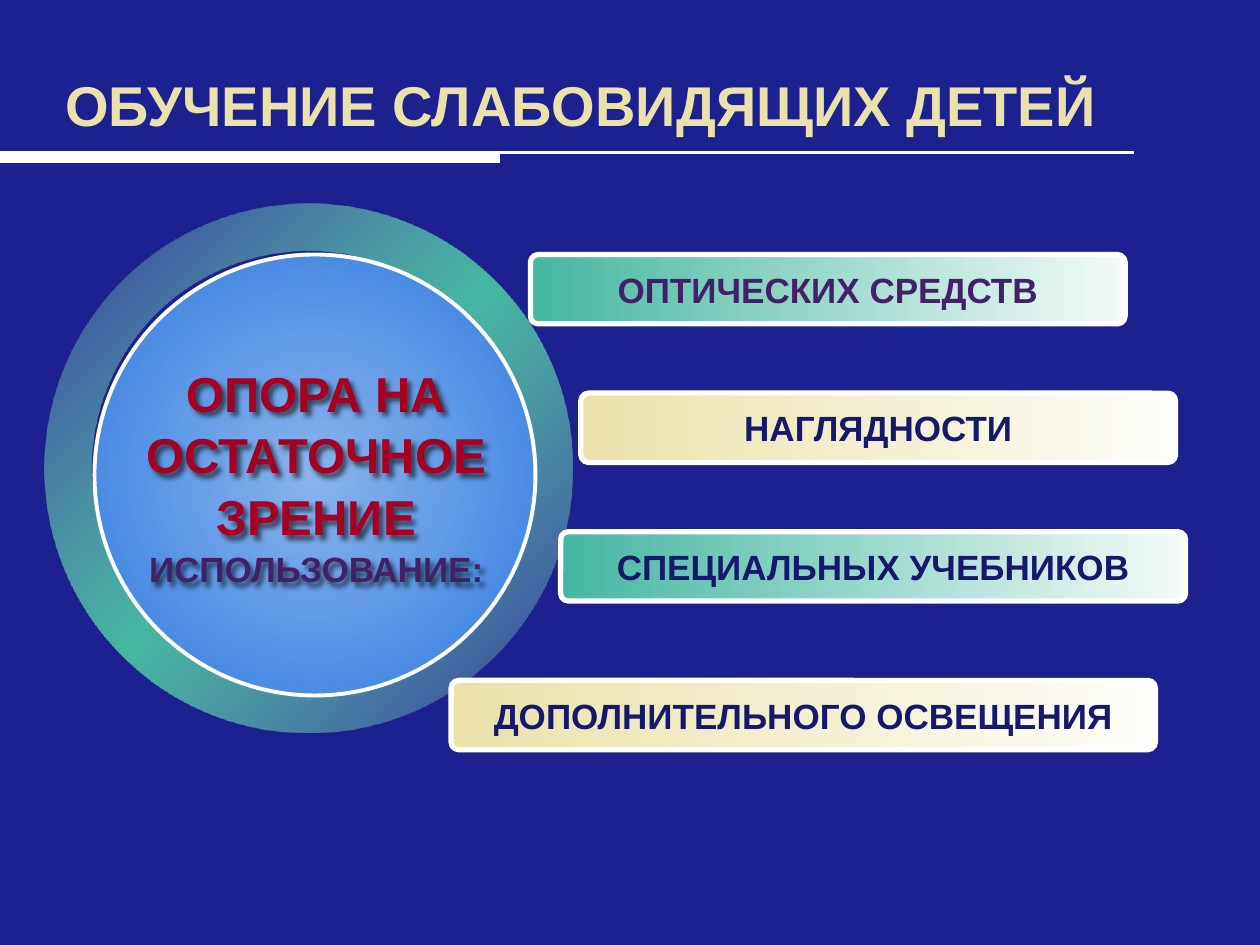
"""Builds a slide on teaching visually impaired children."""
import dataclasses

import lxml.etree
import pptx
import pptx.dml.color
import pptx.enum.shapes
import pptx.enum.text
import pptx.oxml.ns
import pptx.util

Inches = pptx.util.Inches
Pt = pptx.util.Pt
qn = pptx.oxml.ns.qn
Shape = pptx.enum.shapes.MSO_SHAPE
Align = pptx.enum.text.PP_ALIGN
Anchor = pptx.enum.text.MSO_ANCHOR


@dataclasses.dataclass(frozen=True)
class Theme:
    font: str = "Arial"
    background: str = "1D208F"
    white: str = "FFFFFF"
    shadow: str = "000000"
    sand: str = "EAE2AA"
    sand_pale: str = "FEFDFA"
    teal: str = "45B7A1"
    teal_light: str = "8ED3C6"
    teal_pale: str = "F4FBF9"
    blue_light: str = "8AB4ED"
    blue: str = "2F7ADF"
    navy: str = "16186C"
    purple: str = "432169"
    red: str = "A50021"
    title_size: int = 32
    emphasis_size: int = 28
    label_size: int = 20


def rgb(value):
    return pptx.dml.color.RGBColor.from_string(value)


def add_node(parent, tag, **attributes):
    values = {name: str(value) for name, value in attributes.items()}
    return lxml.etree.SubElement(parent, qn(tag), values)


class SlideBuilder:
    def __init__(self, slide, theme):
        self.slide = slide
        self.theme = theme
        slide.background.fill.solid()
        slide.background.fill.fore_color.rgb = rgb(theme.background)

    def rule(self, y, length, weight):
        connector = self.slide.shapes.add_connector(
            pptx.enum.shapes.MSO_CONNECTOR.STRAIGHT,
            Inches(0), Inches(y), Inches(length), Inches(y))
        connector.line.color.rgb = rgb(self.theme.white)
        connector.line.width = Pt(weight)
        add_node(connector._element.spPr, "a:effectLst")

    def shape(self, kind, box, stops, adjustment=None, weight=None, angle=0, radial=False):
        shape = self.slide.shapes.add_shape(kind, *map(Inches, box))
        shape.shadow.inherit = False
        if adjustment is not None:
            shape.adjustments[0] = adjustment
        if weight:
            shape.line.color.rgb = rgb(self.theme.white)
            shape.line.width = Pt(weight)
        else:
            shape.line.fill.background()
        self.gradient(shape, stops, angle, radial)
        return shape

    def gradient(self, shape, stops, angle, radial):
        shape.fill.gradient()
        shape.fill.gradient_angle = angle
        gradient = shape._element.spPr.find(qn("a:gradFill"))
        stop_list = gradient.find(qn("a:gsLst"))
        for stop in list(stop_list):
            stop_list.remove(stop)
        for position, color, opacity in stops:
            stop = add_node(stop_list, "a:gs", pos=position * 1000)
            color_node = add_node(stop, "a:srgbClr", val=color)
            if opacity < 100:
                add_node(color_node, "a:alpha", val=opacity * 1000)
        if radial:
            gradient.remove(gradient.find(qn("a:lin")))
            center = add_node(gradient, "a:path", path="circle")
            add_node(center, "a:fillToRect", l=50000, t=50000, r=50000, b=50000)

    def fill_text(self, shape, lines, anchor=Anchor.MIDDLE, alignment=Align.CENTER, spacing=1.0):
        frame = shape.text_frame
        frame.word_wrap = True
        frame.vertical_anchor = anchor
        for index, (text, size, color) in enumerate(lines):
            paragraph = frame.add_paragraph() if index else frame.paragraphs[0]
            paragraph.alignment = alignment
            paragraph.line_spacing = spacing
            run = paragraph.add_run()
            run.text = text
            run.font.color.rgb = rgb(color)
            formats = {"name": self.theme.font, "size": Pt(size), "bold": True}
            for name, value in formats.items():
                setattr(run.font, name, value)

    def text(self, box, lines, shadow=False, **layout):
        shape = self.slide.shapes.add_textbox(*map(Inches, box))
        self.fill_text(shape, lines, **layout)
        if shadow:
            effects = add_node(shape._element.spPr, "a:effectLst")
            outer = add_node(effects, "a:outerShdw", blurRad=Pt(3), dist=Pt(3),
                             dir=2700000, algn="tl", rotWithShape=0)
            color_node = add_node(outer, "a:srgbClr", val=self.theme.shadow)
            add_node(color_node, "a:alpha", val=60000)

    def bar(self, box, text, colors, text_color):
        stops = [(0, colors[0], 100), (100, colors[1], 100)]
        shape = self.shape(Shape.ROUNDED_RECTANGLE, box, stops, adjustment=0.11, weight=3)
        self.fill_text(shape, [(text, self.theme.label_size, text_color)])


def main():
    presentation = pptx.Presentation()
    presentation.slide_width = Inches(10)
    presentation.slide_height = Inches(7.5)
    theme = Theme()
    builder = SlideBuilder(presentation.slides.add_slide(presentation.slide_layouts[6]), theme)

    builder.rule(1.21, 9, 1.5)
    builder.rule(1.25, 3.97, 6)
    builder.text((0.42, 0.58, 8.92, 0.5),
                 [("ОБУЧЕНИЕ СЛАБОВИДЯЩИХ ДЕТЕЙ", theme.title_size, theme.sand)],
                 alignment=Align.LEFT)

    ring_stops = [(0, theme.teal_light, 12), (50, theme.teal, 100), (100, theme.teal_light, 12)]
    builder.shape(Shape.DONUT, (0.35, 1.62, 4.19, 4.19), ring_stops, adjustment=0.09, angle=315)
    builder.shape(Shape.OVAL, (0.75, 2.02, 3.5, 3.5),
                  [(0, theme.blue_light, 100), (100, theme.blue, 100)], weight=2.25, radial=True)

    teal = (theme.teal, theme.teal_pale)
    sand = (theme.sand, theme.sand_pale)
    bars = [
        (4.21, 2.02, 4.72, "ОПТИЧЕСКИХ СРЕДСТВ", teal, theme.purple),
        (4.61, 3.12, 4.72, "НАГЛЯДНОСТИ", sand, theme.navy),
        (4.45, 4.22, 4.96, "СПЕЦИАЛЬНЫХ УЧЕБНИКОВ", teal, theme.navy),
        (3.58, 5.4, 5.59, "ДОПОЛНИТЕЛЬНОГО ОСВЕЩЕНИЯ", sand, theme.navy),
    ]
    for left, top, width, text, colors, text_color in bars:
        builder.bar((left, top, width, 0.55), text, colors, text_color)

    lines = [(text, theme.emphasis_size, theme.red)
             for text in ("ОПОРА НА", "ОСТАТОЧНОЕ", "ЗРЕНИЕ")]
    lines.append(("ИСПОЛЬЗОВАНИЕ:", theme.label_size, theme.purple))
    builder.text((0.98, 2.81, 3.06, 1.83), lines, shadow=True, anchor=Anchor.TOP, spacing=1.05)

    presentation.save("out.pptx")


if __name__ == "__main__":
    main()
